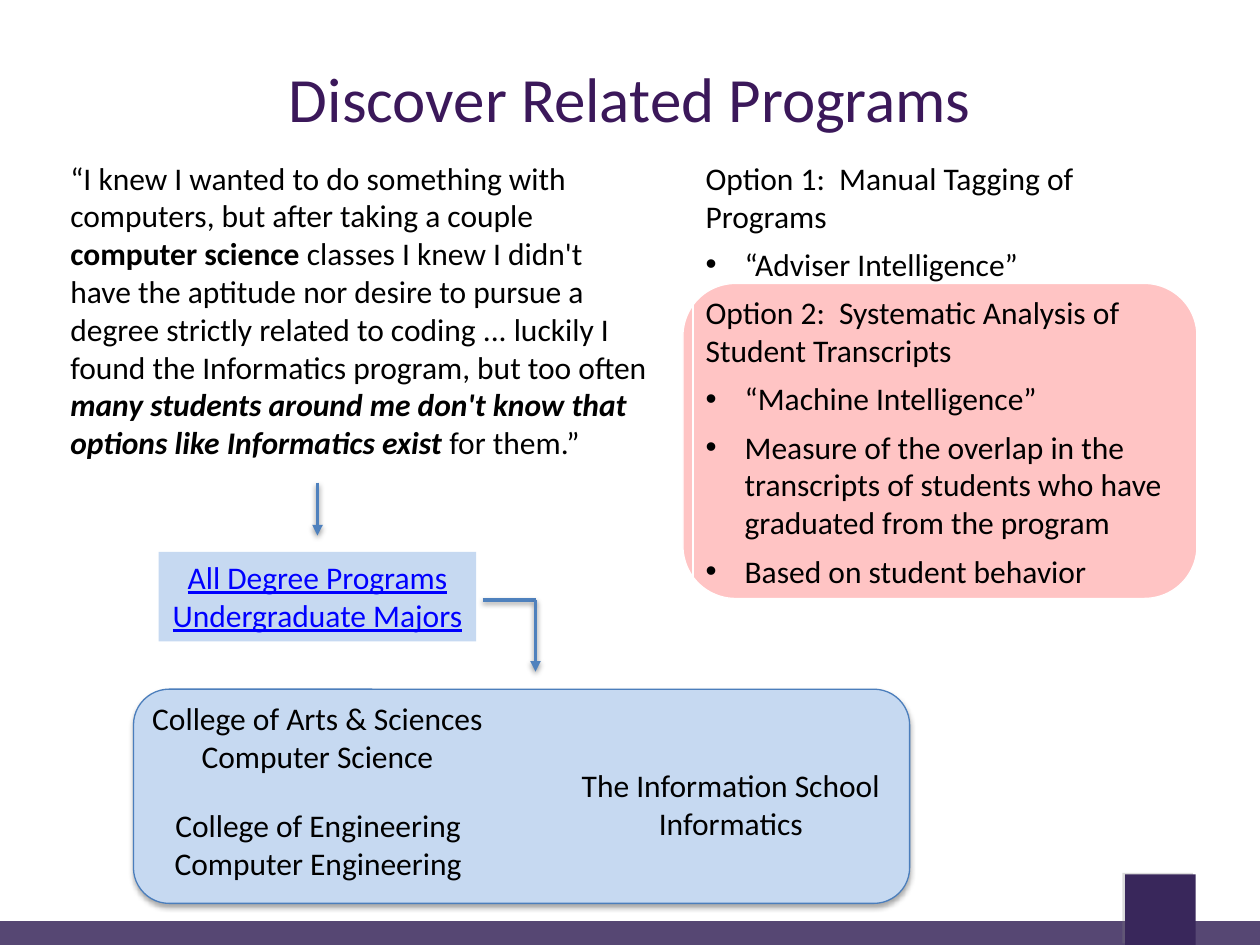
"""Build the Discover Related Programs slide."""
import dataclasses

import pptx
import pptx.dml.color
import pptx.enum.shapes
import pptx.enum.text
import pptx.oxml
import pptx.oxml.ns
import pptx.util

Inches, Pt = pptx.util.Inches, pptx.util.Pt
RGB = pptx.dml.color.RGBColor.from_string
SHAPE = pptx.enum.shapes.MSO_SHAPE
ALIGN = pptx.enum.text.PP_ALIGN
ANCHOR = pptx.enum.text.MSO_ANCHOR
NS = pptx.oxml.ns.nsdecls("a")


@dataclasses.dataclass(frozen=True)
class Theme:
    font: str = "Calibri"
    title_size: int = 36
    text_size: int = 18
    title: str = "3B185A"
    text: str = "000000"
    link: str = "0000FF"
    brand: str = "39275B"
    panel: str = "C6D9F1"
    panel_edge: str = "4B7EBC"
    arrow: str = "4F81BD"
    highlight: str = "FF0000"
    paper: str = "FFFFFF"
    shade: str = "000000"
    tab_shade: str = "808080"


theme = Theme()


def add_block(kind, box, fill=None, edge=None, opacity=100):
    block = slide.shapes.add_shape(kind, *map(Inches, box))
    block.shadow.inherit = False
    if fill:
        block.fill.solid()
        block.fill.fore_color.rgb = RGB(fill)
        if opacity < 100:
            color = block.fill._xPr.find(".//" + pptx.oxml.ns.qn("a:srgbClr"))
            color.append(pptx.oxml.parse_xml(f'<a:alpha {NS} val="{opacity * 1000}"/>'))
    else:
        block.fill.background()
    if edge:
        block.line.color.rgb = RGB(edge)
        block.line.width = Pt(0.75)
    else:
        block.line.fill.background()
    return block


def cast_shadow(item, color, opacity, blur, distance, angle):
    properties = item._element.spPr
    for old in properties.findall(pptx.oxml.ns.qn("a:effectLst")):
        properties.remove(old)
    properties.append(pptx.oxml.parse_xml(
        f'<a:effectLst {NS}><a:outerShdw blurRad="{Pt(blur)}" dist="{Pt(distance)}" '
        f'dir="{angle * 60000}" rotWithShape="0"><a:srgbClr val="{color}">'
        f'<a:alpha val="{opacity * 1000}"/></a:srgbClr></a:outerShdw></a:effectLst>'))


deck = pptx.Presentation()
deck.slide_width, deck.slide_height = Inches(10), Inches(7.5)
slide = deck.slides.add_slide(deck.slide_layouts[1])

footer_band = add_block(SHAPE.RECTANGLE, (0, 7.31, 10, 0.19), theme.brand, opacity=85)
footer_tab = add_block(SHAPE.RECTANGLE, (8.93, 6.94, 0.56, 0.56), theme.brand)
cast_shadow(footer_tab, theme.tab_shade, 27, 0, 1.8, 211)
option_highlight = add_block(SHAPE.ROUNDED_RECTANGLE, (5.42, 2.25, 4.08, 2.5),
                             theme.highlight, theme.paper, 23)
colleges_panel = add_block(SHAPE.ROUNDED_RECTANGLE, (1.06, 5.47, 6.16, 1.7),
                           theme.panel, theme.panel_edge)
cast_shadow(colleges_panel, theme.shade, 35, 3.1, 1.8, 90)

heading = slide.shapes.title
heading.left, heading.top, heading.width, heading.height = map(Inches, (0.5, 0.31, 9, 0.92))
heading.text_frame.text = "Discover Related Programs"
heading.text_frame.vertical_anchor = ANCHOR.MIDDLE
heading_line = heading.text_frame.paragraphs[0]
heading_line.alignment = ALIGN.CENTER
heading_font = heading_line.runs[0].font
heading_font.name, heading_font.size = theme.font, Pt(theme.title_size)
heading_font.color.rgb = RGB(theme.title)

quote = add_block(SHAPE.RECTANGULAR_CALLOUT, (0.46, 1.21, 4.79, 2.52), edge=theme.paper)
quote.adjustments[0], quote.adjustments[1] = 0.05, 0.61
quote.text_frame.word_wrap = True
quote.text_frame.vertical_anchor = ANCHOR.TOP
quote_line = quote.text_frame.paragraphs[0]
quote_line.alignment = ALIGN.LEFT
for words, bold, italic in (
    ("“I knew I wanted to do something with computers, but after taking a couple ", False, False),
    ("computer science ", True, False),
    ("classes I knew I didn't have the aptitude nor desire to pursue a degree strictly "
     "related to coding ... luckily I found the Informatics program, but too often ", False, False),
    ("many students around me don't know that options like Informatics exist ", True, True),
    ("for them.”", False, False),
):
    run = quote_line.add_run()
    run.text = words
    run.font.name, run.font.size = theme.font, Pt(theme.text_size)
    run.font.bold, run.font.italic = bold, italic
    run.font.color.rgb = RGB(theme.text)

for box, lines, fill, color in (
    ((1.09, 5.5, 2.86, 0.71), "College of Arts & Sciences\nComputer Science", None, theme.text),
    ((1.27, 6.35, 2.51, 0.71), "College of Engineering\nComputer Engineering", None, theme.text),
    ((1.26, 4.38, 2.52, 0.71), "All Degree Programs\nUndergraduate Majors", theme.panel, theme.link),
    ((4.5, 6.03, 2.6, 0.71), "The Information School\nInformatics", None, theme.text),
):
    label = slide.shapes.add_textbox(*map(Inches, box))
    if fill:
        label.fill.solid()
        label.fill.fore_color.rgb = RGB(fill)
    label.text_frame.word_wrap = False
    label.text_frame.text = lines
    for paragraph in label.text_frame.paragraphs:
        paragraph.alignment = ALIGN.CENTER
        font = paragraph.runs[0].font
        font.name, font.size = theme.font, Pt(theme.text_size)
        font.color.rgb = RGB(color)
        font.underline = color == theme.link

option_lines = (
    ("Option 1:  Manual Tagging of Programs", False),
    ("“Adviser Intelligence”", True),
    ("Option 2:  Systematic Analysis of Student Transcripts", False),
    ("“Machine Intelligence”", True),
    ("Measure of the overlap in the transcripts of students who have graduated "
     "from the program", True),
    ("Based on student behavior", True),
)
options = slide.placeholders[1]
options.left, options.top, options.width, options.height = map(Inches, (5.5, 1.21, 4, 3.55))
options.line.color.rgb = RGB(theme.paper)
options.line.width = Pt(0.75)
options.text_frame.auto_size = pptx.enum.text.MSO_AUTO_SIZE.NONE
options.text_frame.text = "\n".join(words for words, bulleted in option_lines)
for paragraph, (words, bulleted) in zip(options.text_frame.paragraphs, option_lines):
    paragraph.space_before = Pt(6)
    indent = Inches(0.31) if bulleted else 0
    properties = paragraph._p.get_or_add_pPr()
    properties.set("marL", str(indent))
    properties.set("indent", str(-indent))
    bullet = f'<a:buChar {NS} char="•"/>' if bulleted else f"<a:buNone {NS}/>"
    properties.append(pptx.oxml.parse_xml(bullet))
    font = paragraph.runs[0].font
    font.name, font.size = theme.font, Pt(theme.text_size)
    font.color.rgb = RGB(theme.text)
slide.shapes._spTree.append(options._element)

for start, end, pointed in (
    ((2.52, 3.83), (2.52, 4.25), True),
    ((3.83, 4.76), (4.25, 4.76), False),
    ((4.25, 4.76), (4.25, 5.33), True),
):
    arrow = slide.shapes.add_connector(pptx.enum.shapes.MSO_CONNECTOR.STRAIGHT,
                                       *map(Inches, start + end))
    arrow.line.color.rgb = RGB(theme.arrow)
    arrow.line.width = Pt(2)
    if pointed:
        arrow.line._get_or_add_ln().append(
            pptx.oxml.parse_xml(f'<a:tailEnd {NS} type="triangle"/>'))
    cast_shadow(arrow, theme.shade, 38, 3.1, 1.6, 90)

deck.save("out.pptx")
